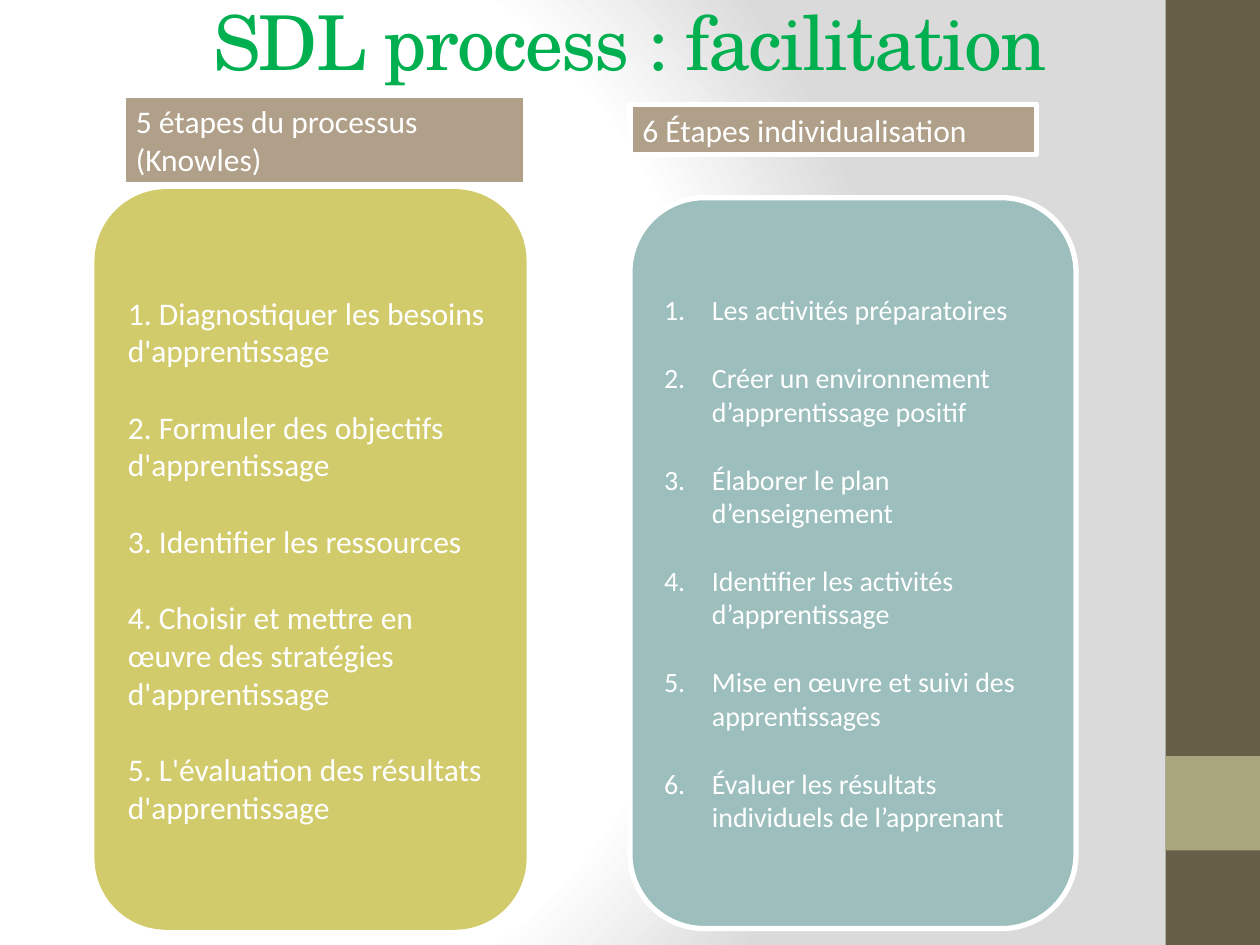
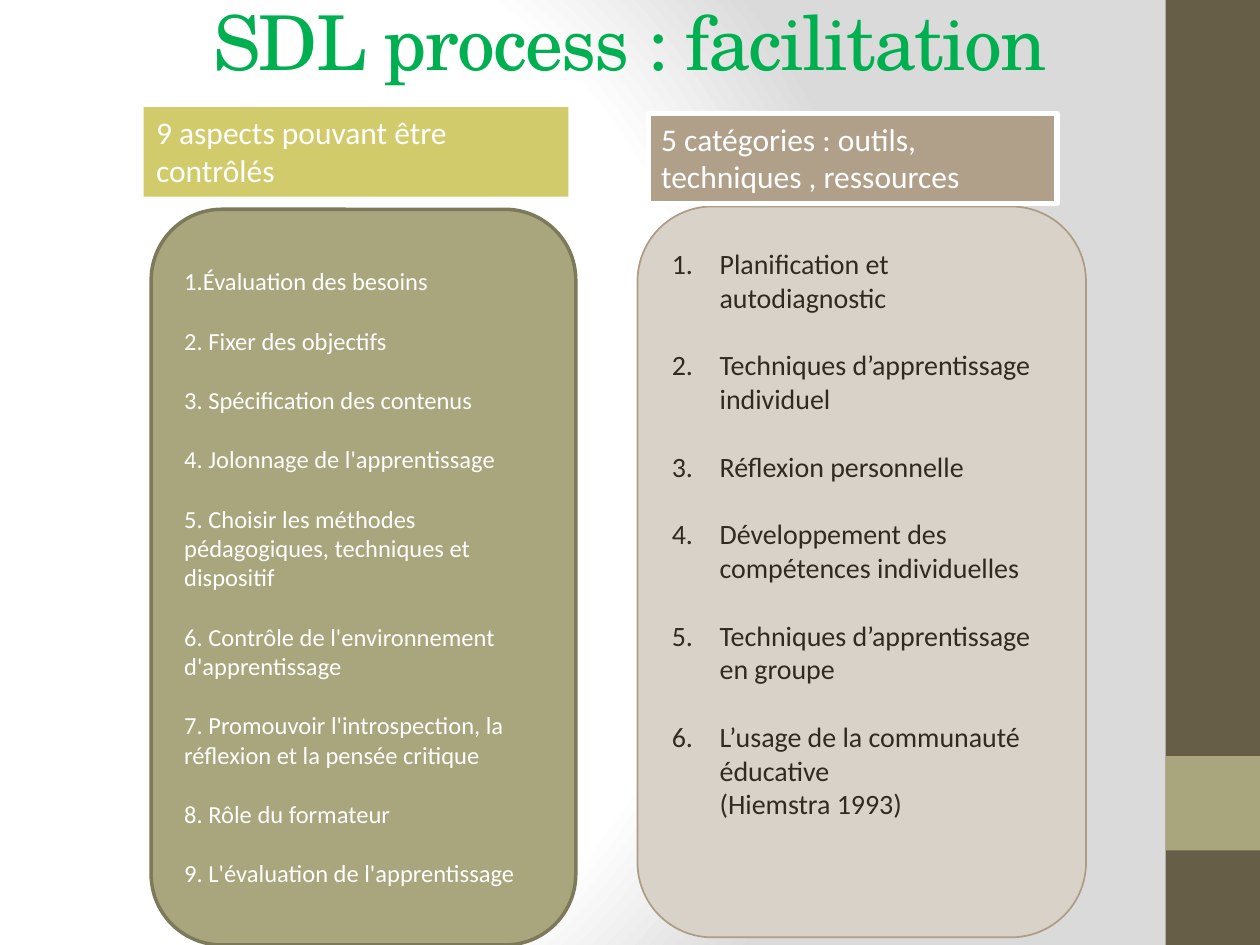
from dataclasses import dataclass
from lxml.etree import SubElement
from pptx import Presentation
from pptx.dml.color import RGBColor
from pptx.enum.shapes import MSO_SHAPE
from pptx.enum.text import MSO_ANCHOR, PP_ALIGN
from pptx.oxml import parse_xml
from pptx.oxml.ns import qn
from pptx.util import Inches, Pt

WIDE, HIGH = Inches(10), Inches(7.5)
RECT, ROUND = MSO_SHAPE.RECTANGLE, MSO_SHAPE.ROUNDED_RECTANGLE


@dataclass(frozen=True)
class Theme:
    """Colours, fonts and type sizes of the deck."""
    white: str = "FFFFFF"
    grey: str = "DADADA"
    ink: str = "2F2B20"
    green: str = "00B050"
    brown: str = "675E47"
    olive: str = "A9A57C"
    moss: str = "7D7A5C"
    lime: str = "D2CB6C"
    tan: str = "B1A089"
    edge: str = "AE9D85"
    sand: str = "D9D2C9"
    teal: str = "9CBEBD"
    head: str = "TeX Gyre Schola"
    body: str = "Calibri"
    big: float = 43.2
    label: int = 18
    text: int = 16
    small: int = 14
    lead: float = 1.22


T = Theme()


@dataclass(frozen=True)
class Box:
    """A place on the slide, in percent of its width and height."""
    x: float
    y: float
    w: float
    h: float

    def inner(self, x, y, w, h):
        """Return a box inside this one, given in percent of it."""
        return Box(self.x + self.w * x / 100, self.y + self.h * y / 100,
                   self.w * w / 100, self.h * h / 100)

    def place(self):
        """Return left, top, width and height as lengths."""
        sides = ((self.x, WIDE), (self.y, HIGH), (self.w, WIDE), (self.h, HIGH))
        return [round(share * full / 100) for share, full in sides]


def put(thing, **vals):
    """Set each named value on the thing."""
    for name, val in vals.items():
        setattr(thing, name, val)


def paint(slide, box, fill, kind=RECT, line=None):
    """Draw a filled shape, with a (colour, points) line if given."""
    shape = slide.shapes.add_shape(kind, *box.place())
    shape.shadow.inherit = False
    shape.fill.solid()
    shape.fill.fore_color.rgb = RGBColor.from_string(fill)
    if line:
        shape.line.color.rgb = RGBColor.from_string(line[0])
        shape.line.width = Pt(line[1])
    else:
        shape.line.fill.background()
    return shape


def write(frame, lines, size, color, font=T.body, align=PP_ALIGN.LEFT, gap=0):
    """Fill the frame with one paragraph a line, a gap between them."""
    for at, line in enumerate(lines):
        para = frame.add_paragraph() if at else frame.paragraphs[0]
        put(para, text=line, alignment=align, space_before=Pt(gap if at else 0))
        for run in para.runs:
            put(run.font, name=font, size=Pt(size))
            run.font.color.rgb = RGBColor.from_string(color)


def count(frame):
    """Number the paragraphs with a hanging indent."""
    hang = Inches(0.38)
    for para in frame.paragraphs:
        props = para._p.get_or_add_pPr()
        for name, val in {"marL": hang, "indent": -hang}.items():
            props.set(name, str(val))
        SubElement(props, qn("a:buFont"), typeface="+mj-lt")
        SubElement(props, qn("a:buAutoNum"), type="arabicPeriod")


def shade(master):
    """Give the master a round white to grey backdrop."""
    master.background.fill.solid()
    solid = master._element.find(".//" + qn("p:bgPr")).find(qn("a:solidFill"))
    stops = "".join(f'<a:gs pos="{pos}000"><a:srgbClr val="{tint}"/></a:gs>'
                    for pos, tint in ((0, T.white), (75, T.white), (100, T.grey)))
    solid.getparent().replace(solid, parse_xml(
        '<a:gradFill xmlns:a="http://schemas.openxmlformats.org/drawingml/2006/main"'
        f' rotWithShape="1"><a:gsLst>{stops}</a:gsLst><a:path path="circle">'
        '<a:fillToRect l="20000" t="50000" r="100000" b="50000"/>'
        '</a:path></a:gradFill>'))


def band(slide, box):
    """Draw the side band and its lighter block."""
    paint(slide, box, T.brown)
    paint(slide, box.inner(0, 80, 100, 10), T.olive)


def title(slide, box, text):
    """Write the slide title."""
    frame = slide.shapes.add_textbox(*box.place()).text_frame
    pad = Inches(0.1)
    put(frame, word_wrap=True, vertical_anchor=MSO_ANCHOR.MIDDLE,
        margin_top=pad, margin_bottom=pad)
    write(frame, [text], T.big, T.green, T.head, PP_ALIGN.CENTER)
    frame.paragraphs[0].runs[0]._r.get_or_add_rPr().set("spc", "-100")


def panel(slide, box, label, card):
    """Draw a rounded card of points under its label."""
    shape = paint(slide, box.inner(*card["spot"]), card["fill"], ROUND, card.get("line"))
    frame, size = shape.text_frame, card["size"]
    put(frame, word_wrap=True, vertical_anchor=MSO_ANCHOR.MIDDLE,
        margin_bottom=Inches(0.05 + card.get("foot", 0)))
    write(frame, card["lines"], size, card.get("ink", T.white), gap=size * T.lead)
    if card.get("count"):
        count(frame)
    shape = paint(slide, box.inner(*label["spot"]), label["fill"], line=label.get("line"))
    put(shape.text_frame, word_wrap=True, vertical_anchor=MSO_ANCHOR.TOP)
    write(shape.text_frame, [label["text"]], T.label, T.white)


def page(deck, panels):
    """Add a slide with band, title and panels."""
    slide = deck.slides.add_slide(deck.slide_layouts[6])
    band(slide, Box(92.5, 0, 7.5, 100))
    title(slide, Box(5, 0, 90, 8.53), "SDL process : facilitation")
    for box, label, card in panels:
        panel(slide, box, label, card)


RIM = (T.white, 3)
STEPS = [
    (Box(7.5, 10.13, 34.3, 88.27),
     dict(spot=(6.7, 0, 93, 10.7), fill=T.tan, line=RIM,
          text="5 étapes du processus (Knowles)"),
     dict(spot=(0, 11.2, 100, 88.8), fill=T.lime, size=T.label, lines=[
         "1. Diagnostiquer les besoins d'apprentissage",
         "2. Formuler des objectifs d'apprentissage",
         "3. Identifier les ressources",
         "4. Choisir et mettre en œuvre des stratégies d'apprentissage",
         "5. L'évaluation des résultats d'apprentissage"])),
    (Box(50, 11.07, 35.4, 87.2),
     dict(spot=(0, 0, 91.2, 6.1), fill=T.tan, line=RIM,
          text="6 Étapes individualisation"),
     dict(spot=(0, 11.3, 100, 88.7), fill=T.teal, line=RIM, size=T.text,
          count=True, lines=[
              "Les activités préparatoires",
              "Créer un environnement d’apprentissage positif",
              "Élaborer le plan d’enseignement",
              "Identifier les activités d’apprentissage",
              "Mise en œuvre et suivi des apprentissages",
              "Évaluer les résultats individuels de l’apprenant"])),
]
TOOLS = [
    (Box(11.4, 11.33, 34.3, 88.67),
     dict(spot=(0, 0, 98.3, 10.7), fill=T.lime,
          text="9 aspects pouvant être contrôlés"),
     dict(spot=(1.75, 12.2, 98.25, 87.8), fill=T.olive, line=(T.moss, 2),
          size=T.small, lines=[
              "1.Évaluation des besoins",
              "2. Fixer des objectifs",
              "3. Spécification des contenus",
              "4. Jolonnage de l'apprentissage",
              "5. Choisir les méthodes pédagogiques, techniques et dispositif",
              "6. Contrôle de l'environnement d'apprentissage",
              "7. Promouvoir l'introspection, la réflexion et la pensée critique",
              "8. Rôle du formateur",
              "9. L'évaluation de l'apprentissage"])),
    (Box(50.6, 12, 35.6, 87.2),
     dict(spot=(2.5, 0, 91, 10.9), fill=T.tan, line=RIM,
          text="5 catégories : outils, techniques , ressources"),
     dict(spot=(0, 11.3, 100, 88.7), fill=T.sand, line=(T.edge, 1), size=T.text,
          ink=T.ink, count=True, foot=0.61, lines=[
              "Planification et autodiagnostic",
              "Techniques d’apprentissage individuel",
              "Réflexion personnelle",
              "Développement des compétences individuelles",
              "Techniques d’apprentissage en groupe",
              "L’usage de la communauté éducative\v(Hiemstra 1993)"])),
]


def main():
    """Build and save the deck."""
    deck = Presentation()
    put(deck, slide_width=WIDE, slide_height=HIGH)
    shade(deck.slide_master)
    for panels in (STEPS, TOOLS):
        page(deck, panels)
    deck.save("out.pptx")


if __name__ == "__main__":
    main()
